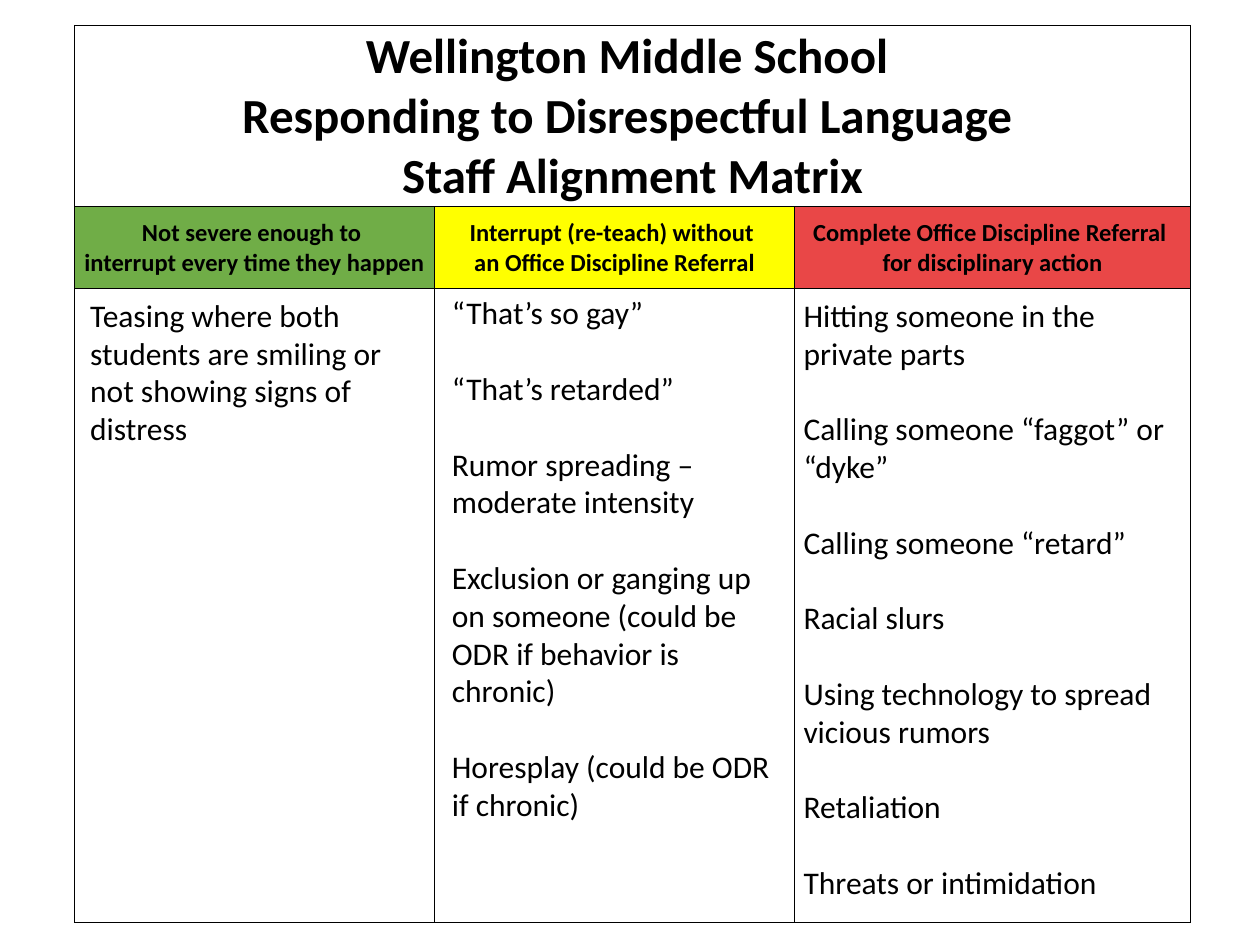
from lxml import etree
from pptx import Presentation
from pptx.dml.color import RGBColor
from pptx.enum.text import MSO_ANCHOR, MSO_AUTO_SIZE, PP_ALIGN
from pptx.oxml.ns import qn
from pptx.util import Cm, Pt

BOTTOM, MIDDLE = MSO_ANCHOR.BOTTOM, MSO_ANCHOR.MIDDLE
CENTER = PP_ALIGN.CENTER
GROW = MSO_AUTO_SIZE.SHAPE_TO_FIT_TEXT
BLACK = "000000"


def color(text):
    return RGBColor.from_string(text)


def style(item, values):
    for name, value in values.items():
        setattr(item, name, value)


deck = Presentation()
style(deck, {"slide_width": Cm(25.4), "slide_height": Cm(19.05)})
slide = deck.slides.add_slide(deck.slide_layouts[6])

widths = [7.26, 7.26, 7.98]
heights = [3.43, 1.65, 12.78]
frame = slide.shapes.add_table(3, 3, Cm(1.5), Cm(0.51), Cm(sum(widths)), Cm(sum(heights)))
table = frame.table
style(table, {"first_row": False, "horz_banding": False})
for column, width in zip(table.columns, widths):
    column.width = Cm(width)
for row, height in zip(table.rows, heights):
    row.height = Cm(height)

for cell in table.iter_cells():
    props = cell._tc.get_or_add_tcPr()
    for side in ("a:lnL", "a:lnR", "a:lnT", "a:lnB"):
        line = etree.SubElement(props, qn(side), w=str(Pt(0.5)))
        fill = etree.SubElement(line, qn("a:solidFill"))
        etree.SubElement(fill, qn("a:srgbClr"), val=BLACK)
    cell.fill.background()

table.cell(0, 0).merge(table.cell(0, 2))
title = "Wellington Middle School \vResponding to Disrespectful Language \vStaff Alignment Matrix"
heads = [
    (0, 0, title, 28, BOTTOM, None),
    (1, 0, "Not severe enough to \vinterrupt every time they happen", 14, MIDDLE, "70AD47"),
    (1, 1, "Interrupt (re-teach) without \van Office Discipline Referral", 14, MIDDLE, "FFFF00"),
    (1, 2, "Complete Office Discipline Referral \vfor disciplinary action", 14, MIDDLE, "E94747"),
]
inset = Cm(0.03)
for row, col, text, size, anchor, shade in heads:
    cell = table.cell(row, col)
    style(cell, {
        "margin_left": inset, "margin_right": inset, "margin_top": inset,
        "margin_bottom": 0, "vertical_anchor": anchor,
    })
    if shade:
        cell.fill.solid()
        cell.fill.fore_color.rgb = color(shade)
    cell.text_frame.text = text
    para = cell.text_frame.paragraphs[0]
    para.alignment = CENTER
    for run in para.runs:
        style(run.font, {"name": "Calibri", "size": Pt(size), "bold": True})
        run.font.color.rgb = color(BLACK)

lists = [
    (1.57, 5.84, 7.09, 3.33, [
        "Teasing where both students are smiling or not showing signs of distress",
    ]),
    (8.86, 5.79, 7.09, 11.02, [
        "“That’s so gay”",
        "“That’s retarded”",
        "Rumor spreading – moderate intensity",
        "Exclusion or ganging up on someone (could be ODR if behavior is chronic)",
        "Horesplay (could be ODR if chronic)",
    ]),
    (15.95, 5.84, 8, 12.57, [
        "Hitting someone in the private parts",
        "Calling someone “faggot” or “dyke”",
        "Calling someone “retard”",
        "Racial slurs",
        "Using technology to spread vicious rumors",
        "Retaliation",
        "Threats or intimidation",
    ]),
]
for left, top, width, height, items in lists:
    box = slide.shapes.add_textbox(Cm(left), Cm(top), Cm(width), Cm(height))
    body = box.text_frame
    style(body, {"word_wrap": True, "auto_size": GROW, "text": "\n".join(items)})
    for spot, para in enumerate(body.paragraphs):
        if spot:
            para.space_before = Pt(21.6)
        for run in para.runs:
            style(run.font, {"name": "Calibri", "size": Pt(18)})
            run.font.color.rgb = color(BLACK)

deck.save("out.pptx")
